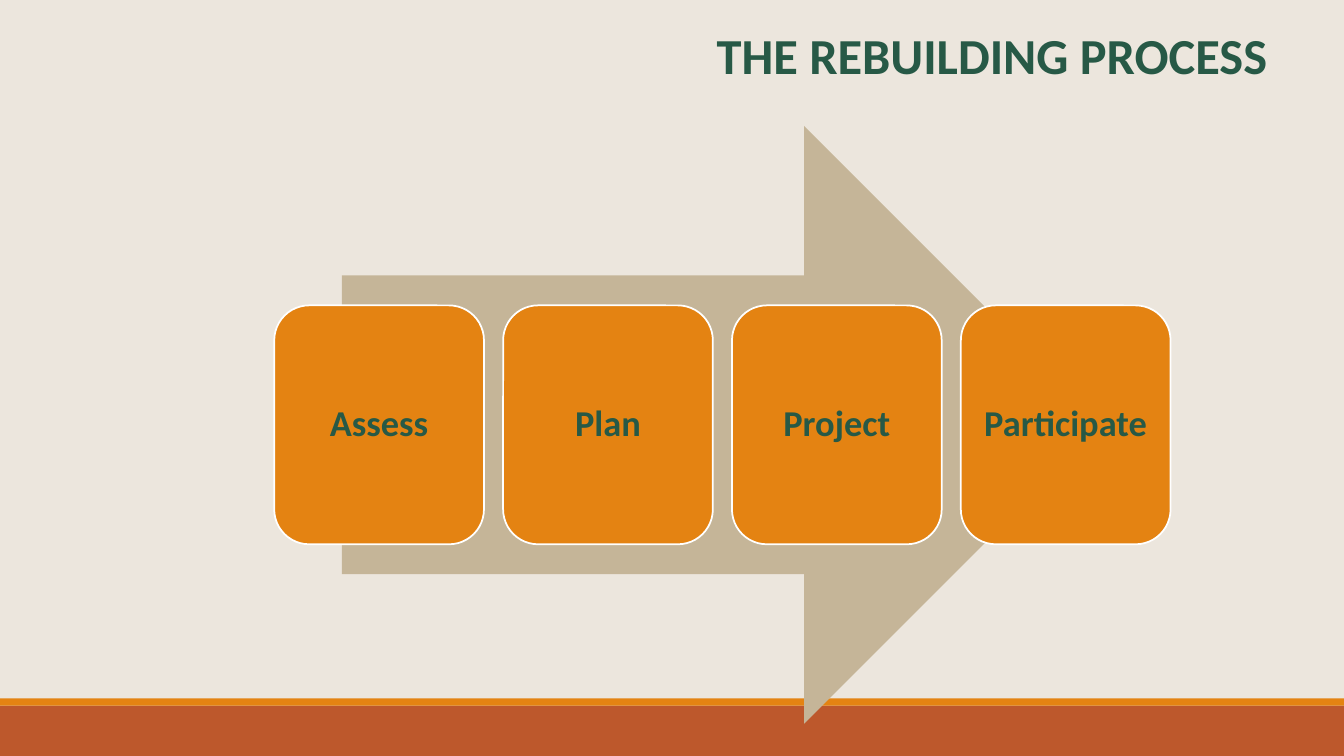
from pptx import Presentation
from pptx import util as u
from pptx.dml import color
from pptx.enum import shapes, text

GREEN = "275946"
ORANGE = "E48312"
RUST = "BD582C"
TAN = "C5B598"
CREAM = "ECE6DD"
WHITE = "FFFFFF"
STEPS = ["Assess", "Plan", "Project", "Participate"]


def paint(target, value):
    target.solid()
    target.fore_color.rgb = color.RGBColor.from_string(value)


def add_block(page, kind, left, top, width, height, fill):
    block = page.shapes.add_shape(
        kind, u.Inches(left), u.Inches(top), u.Inches(width), u.Inches(height))
    block.shadow.inherit = False
    paint(block.fill, fill)
    block.line.fill.background()
    return block


def write(frame, words, size, align, spacing):
    frame.word_wrap = True
    para = frame.paragraphs[0]
    para.text = words
    para.alignment = align
    para.line_spacing = spacing
    para.font.name = "Calibri"
    para.font.size = u.Pt(size)
    para.font.bold = True
    para.font.color.rgb = color.RGBColor.from_string(GREEN)


def add_footer(page, left, top, width, height):
    stripe = 0.07
    kind = shapes.MSO_SHAPE.RECTANGLE
    add_block(page, kind, left, top + stripe, width, height - stripe, RUST)
    add_block(page, kind, left, top, width, stripe, ORANGE)


def add_title(page, left, top, width, height):
    box = page.shapes.add_textbox(
        u.Inches(left), u.Inches(top), u.Inches(width), u.Inches(height))
    box.text_frame.margin_top = u.Inches(0.08)
    write(box.text_frame, "THE REBUILDING PROCESS", 36, text.PP_ALIGN.RIGHT, 0.8)


def add_process(page, left, top, width, height):
    arrow_inset = 0.67
    card_width, card_height = 2.08, 2.37
    pitch = (width - card_width) / (len(STEPS) - 1)
    add_block(page, shapes.MSO_SHAPE.RIGHT_ARROW, left + arrow_inset, top,
              width - 2 * arrow_inset, height, TAN)
    for index, step in enumerate(STEPS):
        card = add_block(page, shapes.MSO_SHAPE.ROUNDED_RECTANGLE,
                         left + index * pitch, top + (height - card_height) / 2,
                         card_width, card_height, ORANGE)
        paint(card.line.fill, WHITE)
        card.line.width = u.Pt(1.25)
        frame = card.text_frame
        frame.margin_left = frame.margin_right = u.Inches(0.11)
        frame.margin_top = frame.margin_bottom = u.Inches(0.11)
        frame.vertical_anchor = text.MSO_ANCHOR.MIDDLE
        write(frame, step, 26, text.PP_ALIGN.CENTER, 0.9)


def main():
    deck = Presentation()
    deck.slide_width = u.Inches(13.33)
    deck.slide_height = u.Inches(7.5)
    page = deck.slides.add_slide(deck.slide_layouts[6])
    paint(page.background.fill, CREAM)
    add_footer(page, 0, 6.93, 13.33, 0.57)
    add_title(page, 0.67, 0.28, 12, 1.25)
    add_process(page, 2.72, 1.25, 8.89, 5.93)
    deck.save("out.pptx")


if __name__ == "__main__":
    main()
